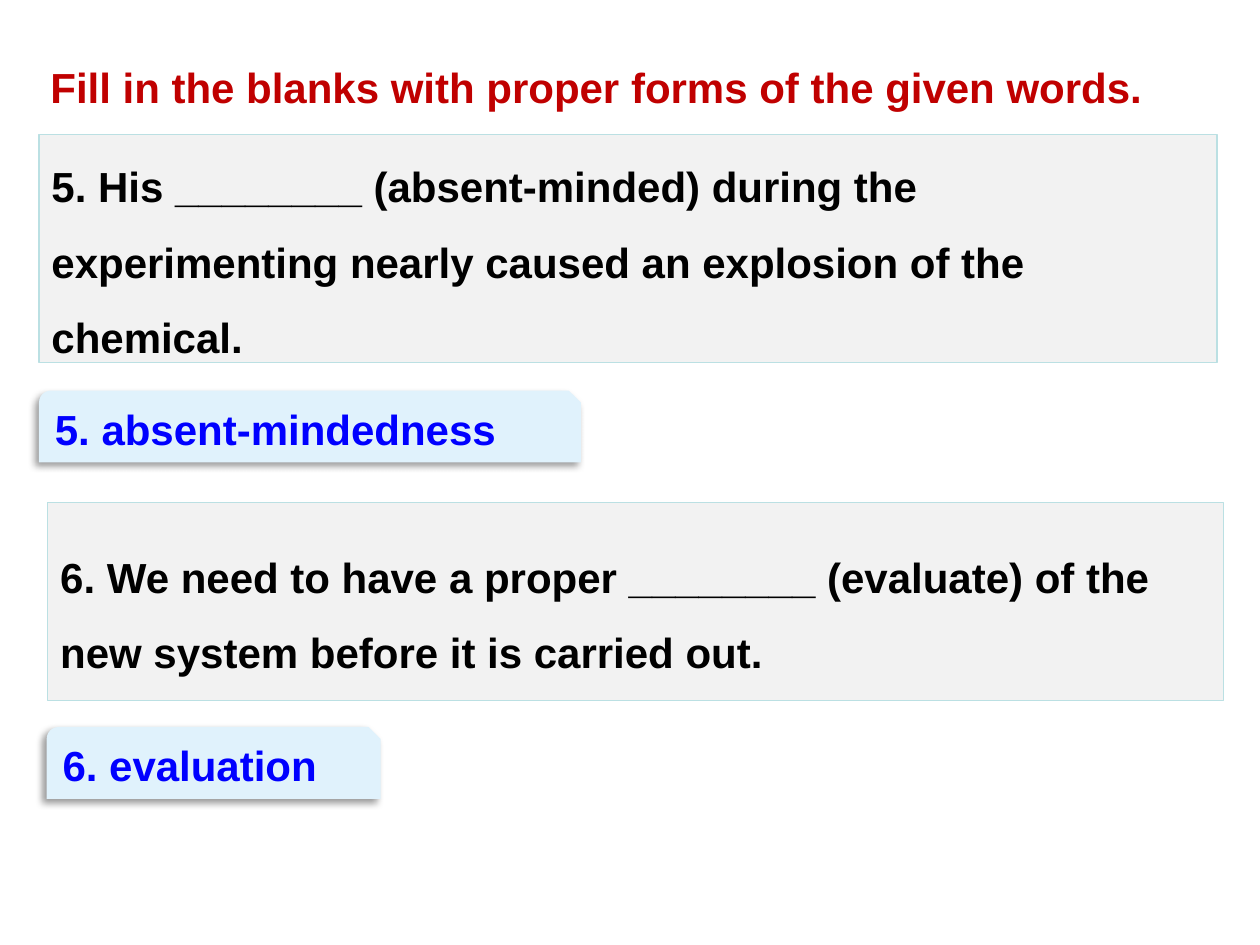
from dataclasses import dataclass

import pptx
import pptx.dml.color
import pptx.enum.shapes
import pptx.enum.text
import pptx.util
from lxml import etree
from pptx.oxml.ns import qn
from pptx.util import Inches

SHAPE = pptx.enum.shapes.MSO_SHAPE
ANCHOR = pptx.enum.text.MSO_ANCHOR


def rgb(value):
    return pptx.dml.color.RGBColor.from_string(value)


@dataclass(frozen=True)
class Theme:
    font: str = "Arial"
    size: int = 24
    heading: str = "C00000"
    question: str = "000000"
    question_fill: str = "F2F2F2"
    question_line: str = "BBE0E3"
    answer: str = "0000FF"
    answer_fill: str = "E0F2FC"
    shadow: str = "000000"


THEME = Theme()


def write(shape, text, color, anchor=ANCHOR.MIDDLE, spacing=1.0):
    frame = shape.text_frame
    frame.text = text
    frame.word_wrap = True
    frame.auto_size = pptx.enum.text.MSO_AUTO_SIZE.NONE
    frame.vertical_anchor = anchor
    paragraph = frame.paragraphs[0]
    paragraph.alignment = pptx.enum.text.PP_ALIGN.LEFT
    paragraph.line_spacing = spacing
    paragraph.font.name = THEME.font
    paragraph.font.size = pptx.util.Pt(THEME.size)
    paragraph.font.bold = True
    paragraph.font.color.rgb = rgb(color)


def add_panel(slide, kind, box, fill):
    panel = slide.shapes.add_shape(kind, *map(Inches, box))
    panel.shadow.inherit = False
    panel.fill.solid()
    panel.fill.fore_color.rgb = rgb(fill)
    return panel


def cast_shadow(shape):
    effects = shape._element.spPr.find(qn("a:effectLst"))
    shadow = etree.SubElement(
        effects, qn("a:outerShdw"),
        blurRad=str(pptx.util.Pt(4)), dist=str(pptx.util.Pt(3)),
        dir=str(135 * 60000), algn="tr", rotWithShape="0")
    color = etree.SubElement(shadow, qn("a:srgbClr"), val=THEME.shadow)
    etree.SubElement(color, qn("a:alpha"), val="40000")


def add_heading(slide, text, box):
    heading = slide.shapes.title
    heading.left, heading.top, heading.width, heading.height = map(Inches, box)
    write(heading, text, THEME.heading, ANCHOR.TOP)


def add_question(slide, text, box):
    question = add_panel(slide, SHAPE.RECTANGLE, box, THEME.question_fill)
    question.line.color.rgb = rgb(THEME.question_line)
    question.line.width = pptx.util.Pt(0.75)
    write(question, text, THEME.question, spacing=1.5)


def add_answer(slide, text, box):
    answer = add_panel(slide, SHAPE.SNIP_ROUND_RECTANGLE, box, THEME.answer_fill)
    answer.line.fill.background()
    cast_shadow(answer)
    write(answer, text, THEME.answer)


def main():
    deck = pptx.Presentation()
    deck.slide_width, deck.slide_height = Inches(10), Inches(7.5)
    slide = deck.slides.add_slide(deck.slide_layouts.get_by_name("Title Only"))

    add_heading(slide, "Fill in the blanks with proper forms of the given words.",
                (0.3, 0.44, 9.33, 0.5))
    add_question(slide, "5. His ________ (absent-minded) during the experimenting "
                 "nearly caused an explosion of the chemical.",
                 (0.31, 1.07, 9.35, 1.81))
    add_answer(slide, "5. absent-mindedness", (0.31, 3.1, 4.3, 0.57))
    add_question(slide, "6. We need to have a proper ________ (evaluate) of the "
                 "new system before it is carried out.",
                 (0.38, 3.99, 9.33, 1.57))
    add_answer(slide, "6. evaluation", (0.37, 5.77, 2.65, 0.57))

    deck.save("out.pptx")


if __name__ == "__main__":
    main()
